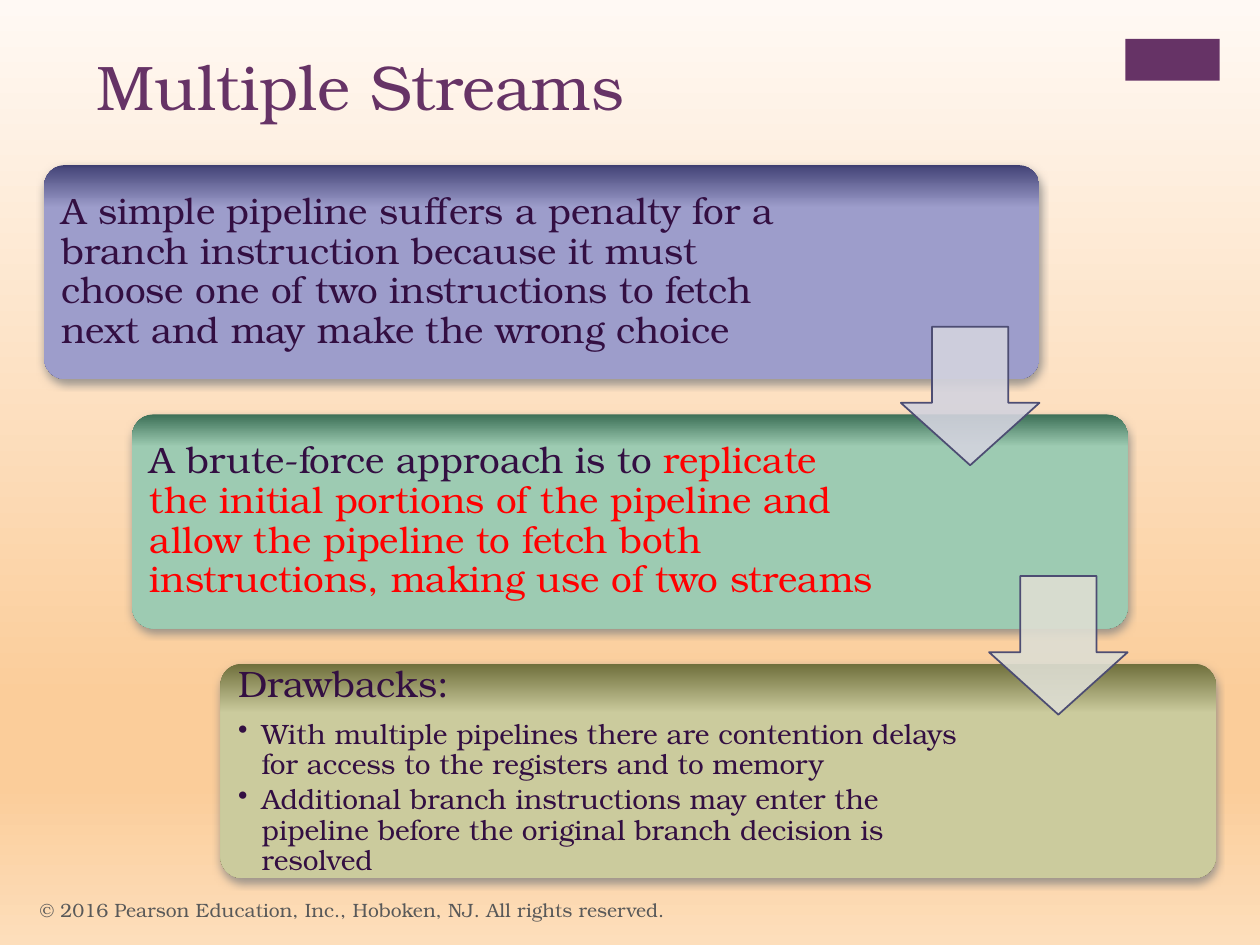
"""Build the "Multiple Streams" slide: three stepped cards joined by down arrows."""
from lxml.etree import SubElement
from pptx import Presentation
from pptx.dml.color import RGBColor
from pptx.enum.shapes import MSO_SHAPE as SHAPE
from pptx.enum.text import MSO_ANCHOR as ANCHOR, PP_ALIGN as ALIGN
from pptx.oxml.ns import qn
from pptx.util import Pt

FONT = "TeX Gyre Bonum"
PLUM, INK, RED, GREY, OUTLINE = "663366", "330F42", "FF0000", "595959", "4D4D73"
TITLE = "Multiple Streams"
COPYRIGHT = "© 2016 Pearson Education, Inc., Hoboken, NJ. All rights reserved."
BACKDROP = [(0, "FFF9F4"), (74, "FBCD9A"), (83, "FBCD9A"), (100, "FDDEBB")]
LEAD = {"size": 21, "format": {"line_spacing": 0.9, "space_after": Pt(8.5)}}
BULLET = {"size": 16, "format": {"line_spacing": 0.9, "space_after": Pt(3)}, "indent": 13.5}
CARDS = [
    {"stops": [(0, "3C3C6F"), (2, "4B4B7E"), (20, "9D9DCB")], "text_width": 437, "arrow": "D3D3DE",
     "paragraphs": [(LEAD, [("A simple pipeline suffers a penalty for a branch instruction because it must "
                             "choose one of two instructions to fetch next and may make the wrong choice", INK)])]},
    {"stops": [(0, "3C6F56"), (15, "9DCBB2")], "text_width": 432, "arrow": "DEDED3",
     "paragraphs": [(LEAD, [("A brute-force approach is to ", INK),
                            ("replicate the initial portions of the pipeline and allow the pipeline to fetch "
                             "both instructions, making use of two streams", RED)])]},
    {"stops": [(0, "6F6F3C"), (23, "CBCB9D")], "text_width": 432, "arrow": None,
     "paragraphs": [(LEAD, [("Drawbacks:", INK)]),
                    (BULLET, [("With multiple pipelines there are contention delays for access to the "
                               "registers and to memory", INK)]),
                    (BULLET, [("Additional branch instructions may enter the pipeline before the original "
                               "branch decision is resolved", INK)])]},
]
CARD_LEFT, CARD_TOP, CARD_WIDTH, CARD_HEIGHT = 25.2, 94.3, 568.8, 122.4
STEP_X, STEP_Y, INSET = 50.4, 142.5, 3.6
ARROW_SIZE, ARROW_DROP = 79.2, 92.4


def apply(target, values):
    for name, value in values.items():
        setattr(target, name, value)


def paint(color_format, color):
    color_format.rgb = RGBColor.from_string(color)


def solid(fill, color):
    fill.solid()
    paint(fill.fore_color, color)


def shade(fill, element, stops):
    fill.gradient()
    fill.gradient_angle = 270
    stop_list = next(element.iter(qn("a:gsLst")))
    for old in list(stop_list):
        stop_list.remove(old)
    for position, color in stops:
        stop = SubElement(stop_list, qn("a:gs"), pos=str(position * 1000))
        SubElement(stop, qn("a:srgbClr"), val=color)


def add_shape(slide, kind, box, adjustments=()):
    shape = slide.shapes.add_shape(kind, *map(Pt, box))
    shape.shadow.inherit = False
    for index, value in enumerate(adjustments):
        shape.adjustments[index] = value
    shape.line.fill.background()
    return shape


def add_text(slide, box, margin_x, margin_y, paragraphs):
    frame = slide.shapes.add_textbox(*map(Pt, box)).text_frame
    apply(frame, {"word_wrap": True, "vertical_anchor": ANCHOR.MIDDLE,
                  "margin_left": Pt(margin_x), "margin_right": Pt(margin_x),
                  "margin_top": Pt(margin_y), "margin_bottom": Pt(margin_y)})
    write(frame, paragraphs)


def write(frame, paragraphs):
    for index, (style, runs) in enumerate(paragraphs):
        paragraph = frame.add_paragraph() if index else frame.paragraphs[0]
        paragraph.alignment = ALIGN.LEFT
        apply(paragraph, style.get("format", {}))
        if "indent" in style:
            indent = Pt(style["indent"])
            properties = paragraph._p.get_or_add_pPr()
            properties.set("marL", str(indent))
            properties.set("indent", str(-indent))
            SubElement(properties, qn("a:buChar"), char="•")
        for words, color in runs:
            run = paragraph.add_run()
            run.text = words
            apply(run.font, {"name": FONT, "size": Pt(style["size"])})
            paint(run.font.color, color)


def add_card(slide, card, left, top):
    panel = add_shape(slide, SHAPE.ROUNDED_RECTANGLE, (left, top, CARD_WIDTH, CARD_HEIGHT), [0.1])
    shade(panel.fill, panel.element, card["stops"])
    shadow = SubElement(next(panel.element.iter(qn("a:effectLst"))), qn("a:outerShdw"),
                        blurRad=str(Pt(5)), dist=str(Pt(2)), dir="5400000", rotWithShape="0")
    tint = SubElement(shadow, qn("a:srgbClr"), val="808080")
    SubElement(tint, qn("a:alpha"), val="75000")
    text_box = (left + INSET, top + INSET, card["text_width"], CARD_HEIGHT - 2 * INSET)
    add_text(slide, text_box, 6.5, 6.5, card["paragraphs"])


def add_arrow(slide, color, left, top):
    box = (left + CARD_WIDTH - ARROW_SIZE, top + ARROW_DROP, ARROW_SIZE, ARROW_SIZE)
    arrow = add_shape(slide, SHAPE.DOWN_ARROW, box, [0.55, 0.45])
    solid(arrow.fill, color)
    SubElement(next(arrow.element.iter(qn("a:srgbClr"))), qn("a:alpha"), val="90000")
    solid(arrow.line.fill, OUTLINE)
    arrow.line.width = Pt(1)


def main():
    deck = Presentation()
    apply(deck, {"slide_width": Pt(720), "slide_height": Pt(540)})
    slide = deck.slides.add_slide(deck.slide_layouts[5])
    shade(slide.background.fill, slide.element, BACKDROP)

    solid(add_shape(slide, SHAPE.RECTANGLE, (643, 22.3, 54, 23.8)).fill, PLUM)
    title = slide.shapes.title
    apply(title, {"left": Pt(48.2), "top": Pt(23.8), "width": Pt(594.7), "height": Pt(87.8)})
    title.text_frame.vertical_anchor = ANCHOR.TOP
    write(title.text_frame, [({"size": 36}, [(TITLE, PLUM)])])

    places = [(CARD_LEFT + i * STEP_X, CARD_TOP + i * STEP_Y) for i in range(len(CARDS))]
    for card, place in zip(CARDS, places):
        add_card(slide, card, *place)
    for card, place in zip(CARDS, places):
        if card["arrow"]:
            add_arrow(slide, card["arrow"], *place)

    add_text(slide, (15.8, 505.4, 482.4, 28.8), 7.2, 3.6, [({"size": 11}, [(COPYRIGHT, GREY)])])
    deck.save("out.pptx")


if __name__ == "__main__":
    main()
